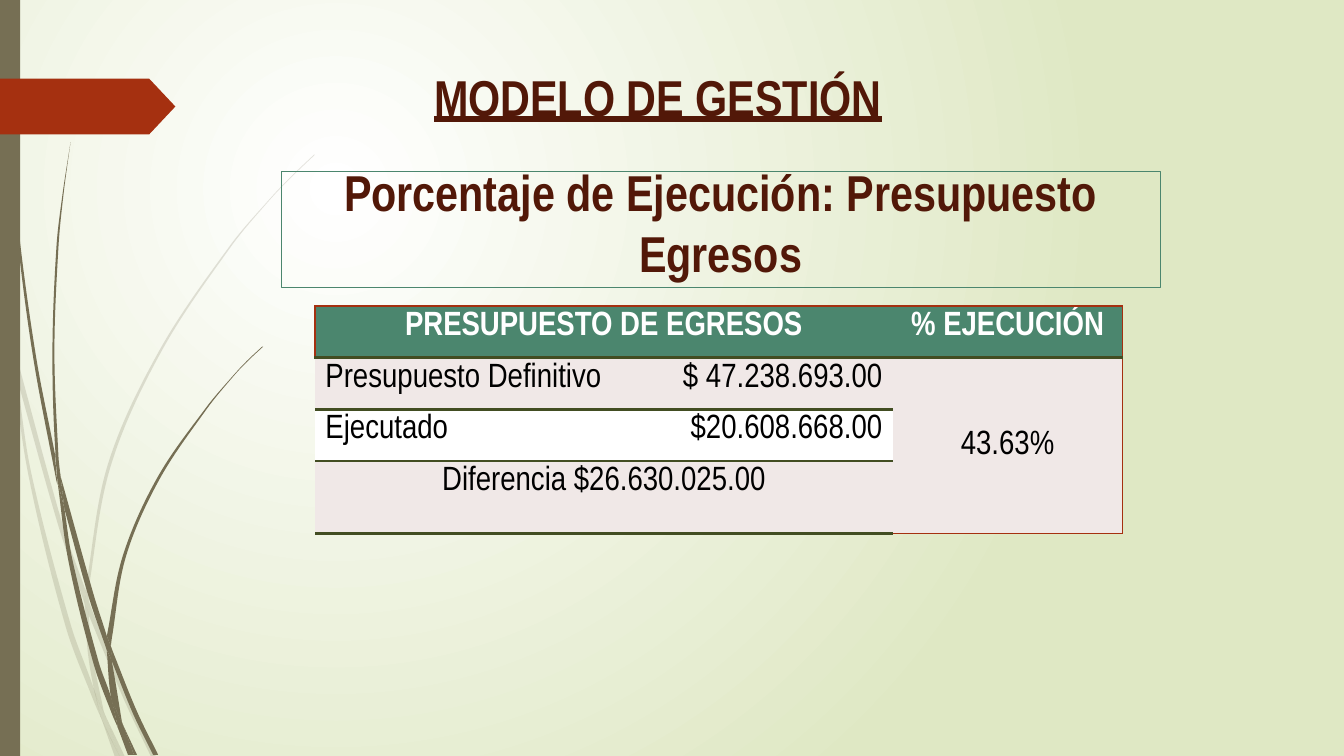
from math import dist
from lxml.etree import SubElement
from pptx import Presentation
from pptx.dml.color import RGBColor
from pptx.enum.shapes import MSO_SHAPE
from pptx.enum.text import MSO_ANCHOR, PP_ALIGN
from pptx.oxml.ns import qn
from pptx.util import Pt

COLORS = {
    "white": "FFFFFF", "black": "000000", "meadow": "DFE8C4", "stem": "766F54",
    "red": "A53010", "green": "4B866E", "maroon": "521808", "olive": "424D22",
    "blush": "F0E8E7",
}
FONT = "Arial Narrow"

FAINT_BLADES = [
    ([(11, 350), (9, 322), (0, 282)], [(0, 299), (10, 344), (11, 350)]),
    ([(17, 376), (58, 522), (84, 599)], [(85, 586), (62, 520), (14, 345)]),
    ([(88, 610), (123, 694), (150, 751)], [(155, 751), (127, 692), (92, 607), (88, 596)]),
    ([(119, 751)], [(124, 751), (105, 711)]),
    ([(11, 350), (28, 470), (65, 621), (92, 693), (101, 714)],
     [(99, 707), (93, 683), (70, 619), (31, 469), (17, 376)]),
    ([(84, 599), (87, 646), (93, 683), (96, 692), (105, 711)],
     [(103, 706), (91, 646), (88, 610), (88, 608)]),
    ([(85, 586), (85, 584), (107, 461), (158, 348), (228, 244), (268, 197), (289, 175), (312, 153)],
     [(312, 154), (290, 175), (268, 198), (229, 245), (160, 349), (110, 462), (88, 584), (88, 596)]),
    ([(101, 714), (114, 751)], [(119, 751)]),
    ([(85, 586), (84, 599)], [(88, 608), (88, 610), (88, 596)]),
    ([(93, 683), (99, 707), (101, 714), (119, 751)], [(105, 711), (96, 692)]),
]
DARK_BLADES = [
    ([(3, 0), (4, 48), (7, 110), (17, 233), (33, 355), (56, 477), (57, 481)],
     [(55, 457), (55, 453), (36, 355), (19, 232), (8, 109), (5, 48), (4, 0)]),
    ([(64, 505), (88, 592), (106, 645)], [(106, 633), (106, 631), (93, 590), (60, 472)]),
    ([(111, 656), (132, 708), (152, 749)], [(157, 749), (136, 706), (113, 649), (110, 641)]),
    ([(57, 477), (68, 557), (93, 659), (111, 708), (117, 722)],
     [(116, 717), (110, 691), (98, 657), (72, 556), (64, 505)]),
    ([(60, 472), (55, 449), (52, 349), (56, 245), (62, 193), (70, 141)],
     [(70, 141), (63, 193), (58, 245), (54, 349), (58, 453), (60, 472)]),
    ([(133, 749)], [(136, 749), (122, 719)]),
    ([(57, 477), (64, 505)], [(60, 472), (55, 449), (55, 453)]),
    ([(106, 631), (122, 551), (156, 474), (204, 405), (231, 373), (245, 358), (260, 344)],
     [(261, 344), (245, 359), (231, 374), (205, 406), (158, 476), (125, 552), (111, 633), (110, 641)]),
    ([(117, 722), (127, 749)], [(131, 749)]),
    ([(106, 645), (110, 691), (116, 706), (122, 719)], [(121, 716), (111, 656), (109, 651)]),
    ([(106, 631), (106, 633), (106, 645)], [(109, 651), (111, 656), (110, 641)]),
    ([(110, 691), (116, 717), (117, 722), (130, 749)], [(133, 749), (122, 719), (116, 706)]),
]


def edge_controls(points):
    padded = [points[0], *points, points[-1]]
    controls = []
    for before, start, end, after in zip(padded, padded[1:], padded[2:], padded[3:]):
        reach = dist(start, end) / 3
        leaving = reach / (dist(before, end) or 1)
        arriving = reach / (dist(start, after) or 1)
        controls.append((
            tuple(s + (e - b) * leaving for b, s, e in zip(before, start, end)),
            tuple(e - (a - s) * arriving for s, e, a in zip(start, end, after))))
    return controls


def color(name):
    return RGBColor.from_string(COLORS[name])


def write_text(frame, text, size=24, ink="black", bold=False, underline=False,
               align=PP_ALIGN.CENTER):
    paragraph = frame.paragraphs[0]
    paragraph.alignment = align
    run = paragraph.add_run()
    run.text = text
    run.font.name = FONT
    run.font.size = Pt(size)
    run.font.bold = bold
    run.font.underline = underline
    run.font.color.rgb = color(ink)


class SlideBuilder:
    def __init__(self, slide):
        self.slide = slide

    def background(self, inner, outer):
        fill = self.slide.background.fill
        fill.gradient()
        for stop, name, position in zip(fill.gradient_stops, (inner, outer), (0, 1)):
            stop.color.rgb = color(name)
            stop.position = position
        gradient = self.slide.element.xpath(".//a:gradFill")[0]
        gradient.remove(gradient.find(qn("a:lin")))
        circle = SubElement(gradient, qn("a:path"), path="circle")
        SubElement(circle, qn("a:fillToRect"), l="50000", t="50000", r="100000", b="100000")

    def paint(self, shape, fill, alpha=None):
        shape.shadow.inherit = False
        shape.line.fill.background()
        shape.fill.solid()
        shape.fill.fore_color.rgb = color(fill)
        if alpha:
            solid = shape.element.spPr.find(qn("a:solidFill"))
            SubElement(solid[0], qn("a:alpha"), val=str(alpha * 1000))

    def blade(self, edges, fill, alpha=None):
        edges = [[(x * 72, y * 72) for x, y in edge] for edge in edges]
        outline = edges[0] + edges[1]
        builder = self.slide.shapes.build_freeform(*outline[0], scale=Pt(1) / 100)
        builder.add_line_segments(outline[1:], close=True)
        shape = builder.convert_to_shape()
        left, top = (min(values) for values in zip(*outline))
        segments = edge_controls(edges[0]) + [None] + edge_controls(edges[1])
        for line, controls in zip(shape.element.xpath(".//a:lnTo"), segments):
            if controls:
                line.tag = qn("a:cubicBezTo")
                for index, (x, y) in enumerate(controls):
                    point = SubElement(line, qn("a:pt"), x=str(round(x - left)), y=str(round(y - top)))
                    line.insert(index, point)
        self.paint(shape, fill, alpha)

    def block(self, kind, box, fill):
        shape = self.slide.shapes.add_shape(kind, *map(Pt, box))
        self.paint(shape, fill)
        return shape

    def heading(self, box, text, outline=None, **text_format):
        shape = self.slide.shapes.add_textbox(*map(Pt, box))
        if outline:
            shape.line.color.rgb = color(outline)
            shape.line.width = Pt(0.75)
        shape.text_frame.word_wrap = True
        shape.text_frame.vertical_anchor = MSO_ANCHOR.BOTTOM
        write_text(shape.text_frame, text, size=36, ink="maroon", bold=True, **text_format)

    def table(self, left, top, widths, heights):
        frame = self.slide.shapes.add_table(
            len(heights), len(widths), Pt(left), Pt(top), Pt(sum(widths)), Pt(sum(heights)))
        for column, width in zip(frame.table.columns, widths):
            column.width = Pt(width)
        for row, height in zip(frame.table.rows, heights):
            row.height = Pt(height)
        return frame.table

    def cell(self, cell, fill, borders):
        cell.margin_left = cell.margin_right = Pt(7.5)
        cell.margin_top = cell.margin_bottom = Pt(3.6)
        properties = cell._tc.get_or_add_tcPr()
        for side in "LRTB":
            name, width = borders.get(side, (None, 0))
            line = SubElement(properties, qn(f"a:ln{side}"), w=str(Pt(width)))
            if name:
                solid = SubElement(line, qn("a:solidFill"))
                SubElement(solid, qn("a:srgbClr"), val=COLORS[name])
            else:
                SubElement(line, qn("a:noFill"))
        cell.fill.solid()
        cell.fill.fore_color.rgb = color(fill)


def add_budget_table(builder):
    table = builder.table(225, 218.6, (215.3, 197.3, 164.2), (36.9, 36.9, 36.9, 52))
    thick, thin = ("olive", 2.25), ("red", 1)
    for row, fill in enumerate(("green", "blush", "white", "blush")):
        for column in range(3):
            borders = {"T": thick if row else thin,
                       "B": thin if row and column == 2 else thick}
            if row == 0 and column == 0:
                borders["L"] = thin
            if column == 2:
                borders["R"] = thin
            builder.cell(table.cell(row, column), "blush" if row and column == 2 else fill, borders)
    for first, last in (((0, 0), (0, 1)), ((3, 0), (3, 1)), ((1, 2), (3, 2))):
        table.cell(*first).merge(table.cell(*last))
    for column, text in ((0, "PRESUPUESTO DE EGRESOS"), (2, "% EJECUCIÓN")):
        write_text(table.cell(0, column).text_frame, text, ink="white", bold=True)
    amounts = (("Presupuesto Definitivo", "$ 47.238.693.00"), ("Ejecutado", "$20.608.668.00"))
    for row, (label, amount) in enumerate(amounts, 1):
        write_text(table.cell(row, 0).text_frame, label, align=PP_ALIGN.LEFT)
        write_text(table.cell(row, 1).text_frame, amount, align=PP_ALIGN.RIGHT)
    write_text(table.cell(3, 0).text_frame, "Diferencia $26.630.025.00")
    table.cell(1, 2).vertical_anchor = MSO_ANCHOR.MIDDLE
    write_text(table.cell(1, 2).text_frame, "43.63%")


def main():
    presentation = Presentation()
    presentation.slide_width, presentation.slide_height = Pt(960), Pt(540)
    builder = SlideBuilder(presentation.slides.add_slide(presentation.slide_layouts[6]))
    builder.background("white", "meadow")
    for edges in FAINT_BLADES:
        builder.blade(edges, "stem", alpha=20)
    for edges in DARK_BLADES:
        builder.blade(edges, "stem")
    builder.block(MSO_SHAPE.RECTANGLE, (0, 0, 14.4, 540), "stem")
    arrow = builder.block(MSO_SHAPE.PENTAGON, (0, 56.2, 125.3, 39.8), "red")
    arrow.adjustments[0] = 0.47
    add_budget_table(builder)
    builder.heading((299, 41.2, 342, 52.6), "MODELO DE GESTIÓN", underline=True)
    builder.heading((200.9, 122.5, 627.8, 82.8),
                    "Porcentaje de Ejecución: Presupuesto Egresos", outline="green")
    presentation.save("out.pptx")


if __name__ == "__main__":
    main()
